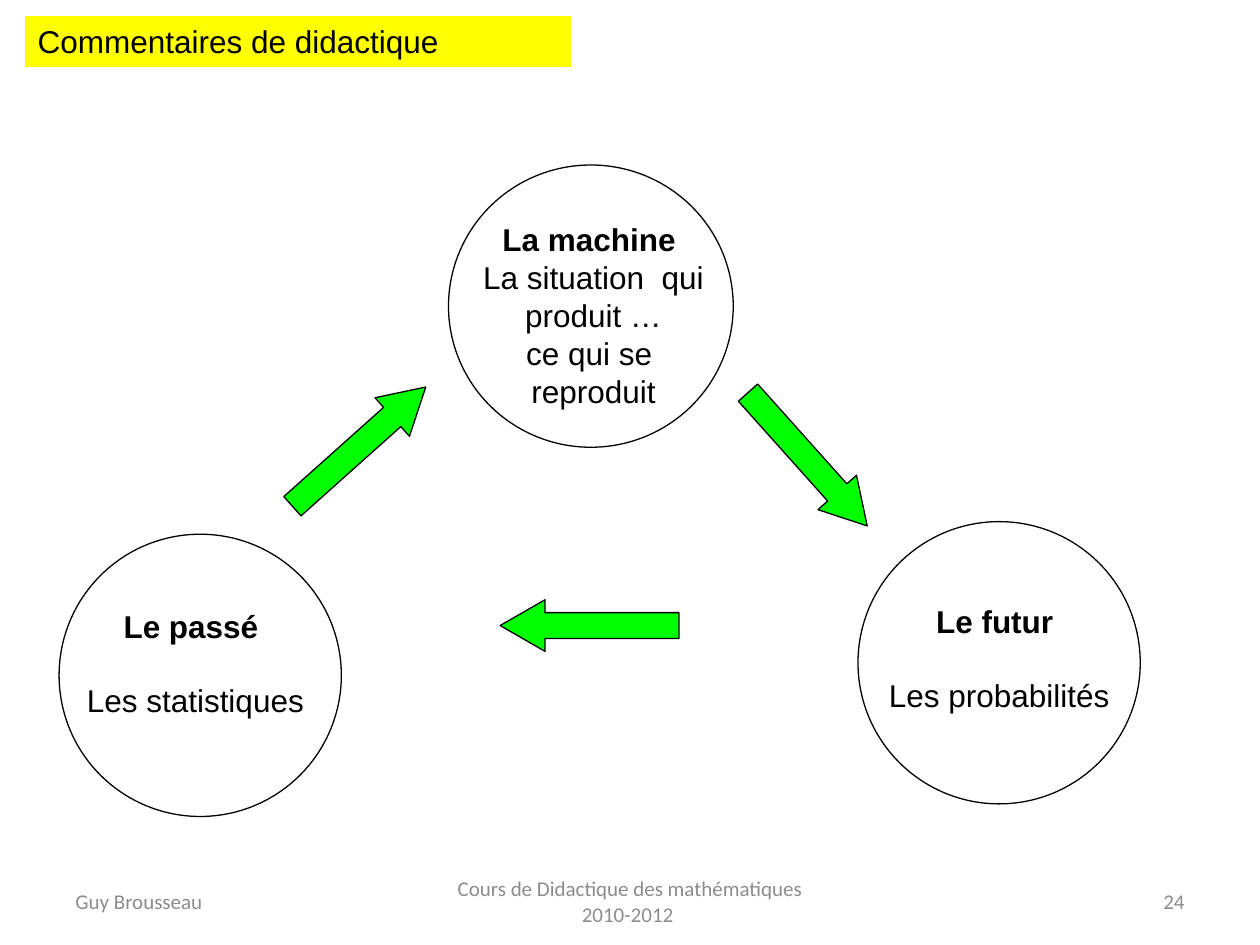
from pptx import Presentation
from pptx.dml.color import RGBColor
from pptx.enum.shapes import MSO_SHAPE
from pptx.enum.text import MSO_ANCHOR, PP_ALIGN
from pptx.util import Pt

RECT, OVAL = MSO_SHAPE.RECTANGLE, MSO_SHAPE.OVAL
RIGHT_ARROW, LEFT_ARROW = MSO_SHAPE.RIGHT_ARROW, MSO_SHAPE.LEFT_ARROW
TOP, MIDDLE = MSO_ANCHOR.TOP, MSO_ANCHOR.MIDDLE
LEFT, CENTER, RIGHT = PP_ALIGN.LEFT, PP_ALIGN.CENTER, PP_ALIGN.RIGHT

COLORS = {"ink": "000000", "paper": "FFFFFF", "arrow": "00FF00",
          "title": "FFFF00", "foot": "8C8C8C"}
BODY = {"name": "Arial", "size": Pt(18), "bold": False}
HEAD = {**BODY, "bold": True}
FOOT = {"name": "Calibri", "size": Pt(12)}


class Deck:
    """Draws styled elements on the current slide."""

    def __init__(self, slide):
        self.slide = slide

    def color(self, key):
        return RGBColor.from_string(COLORS[key])

    def shape(self, kind, box, fill=None, line=None):
        shape = self.slide.shapes.add_shape(kind, *map(Pt, box))
        shape.shadow.inherit = False
        for part, key in ((shape.fill, fill), (shape.line.fill, line)):
            if key:
                part.solid()
                part.fore_color.rgb = self.color(key)
            else:
                part.background()
        if line:
            shape.line.width = Pt(0.75)
        return shape

    def text(self, shape, lines, align, anchor=TOP, ink="ink", gap=0):
        frame = shape.text_frame
        frame.word_wrap = True
        frame.vertical_anchor = anchor
        for i, (words, style) in enumerate(lines):
            para = frame.paragraphs[0] if i == 0 else frame.add_paragraph()
            para.alignment = align
            if i:
                para.space_before = Pt(gap)
            run = para.add_run()
            run.text = words
            for name, value in style.items():
                setattr(run.font, name, value)
            run.font.color.rgb = self.color(ink)

    def stage(self, label, ring, lines, gap=0):
        self.text(self.shape(RECT, label, "paper"), lines, CENTER, gap=gap)
        self.shape(OVAL, ring, line="ink")

    def arrow(self, left, top, turn=0, kind=RIGHT_ARROW):
        arrow = self.shape(kind, (left, top, 102.2, 29.5), "arrow", "ink")
        arrow.rotation = turn
        arrow.adjustments[0] = 0.5
        arrow.adjustments[1] = 0.87

    def title(self, box, words):
        self.text(self.shape(RECT, box, "title"), [(words, BODY)], LEFT)

    def footer(self, left, width, words, align):
        box = self.slide.shapes.add_textbox(Pt(left), Pt(500.5), Pt(width), Pt(28.8))
        self.text(box, [(words, FOOT)], align, MIDDLE, "foot")


def main():
    prs = Presentation()
    prs.slide_width, prs.slide_height = Pt(720), Pt(540)
    deck = Deck(prs.slides.add_slide(prs.slide_layouts[6]))

    deck.stage((31, 343.4, 161.3, 87.8), (33.8, 305.3, 161.3, 161.3),
               [("Le passé ", HEAD), ("Les statistiques", BODY)], 20.7)
    deck.stage((257.8, 122.4, 162.7, 117.4), (256.3, 94.3, 162.7, 161.3),
               [("La machine ", HEAD), ("La situation  qui produit …", BODY),
                ("ce qui se ", BODY), ("reproduit", BODY)])
    deck.stage((490.3, 340.6, 161.3, 87.8), (490.3, 298.1, 161.3, 161.3),
               [("Le futur ", HEAD), ("Les probabilités", BODY)], 20.7)

    deck.arrow(154.1, 240.5, 318.2)
    deck.arrow(410.4, 247.7, 48.2)
    deck.arrow(285.8, 342.7, kind=LEFT_ARROW)

    deck.title((14.4, 9.2, 311.8, 29), "Commentaires de didactique")
    for part in ((36, 168, "Guy Brousseau", LEFT),
                 (246, 228, "Cours de Didactique des mathématiques 2010-2012 ", CENTER),
                 (516, 168, "24", RIGHT)):
        deck.footer(*part)
    prs.save("out.pptx")


if __name__ == "__main__":
    main()
